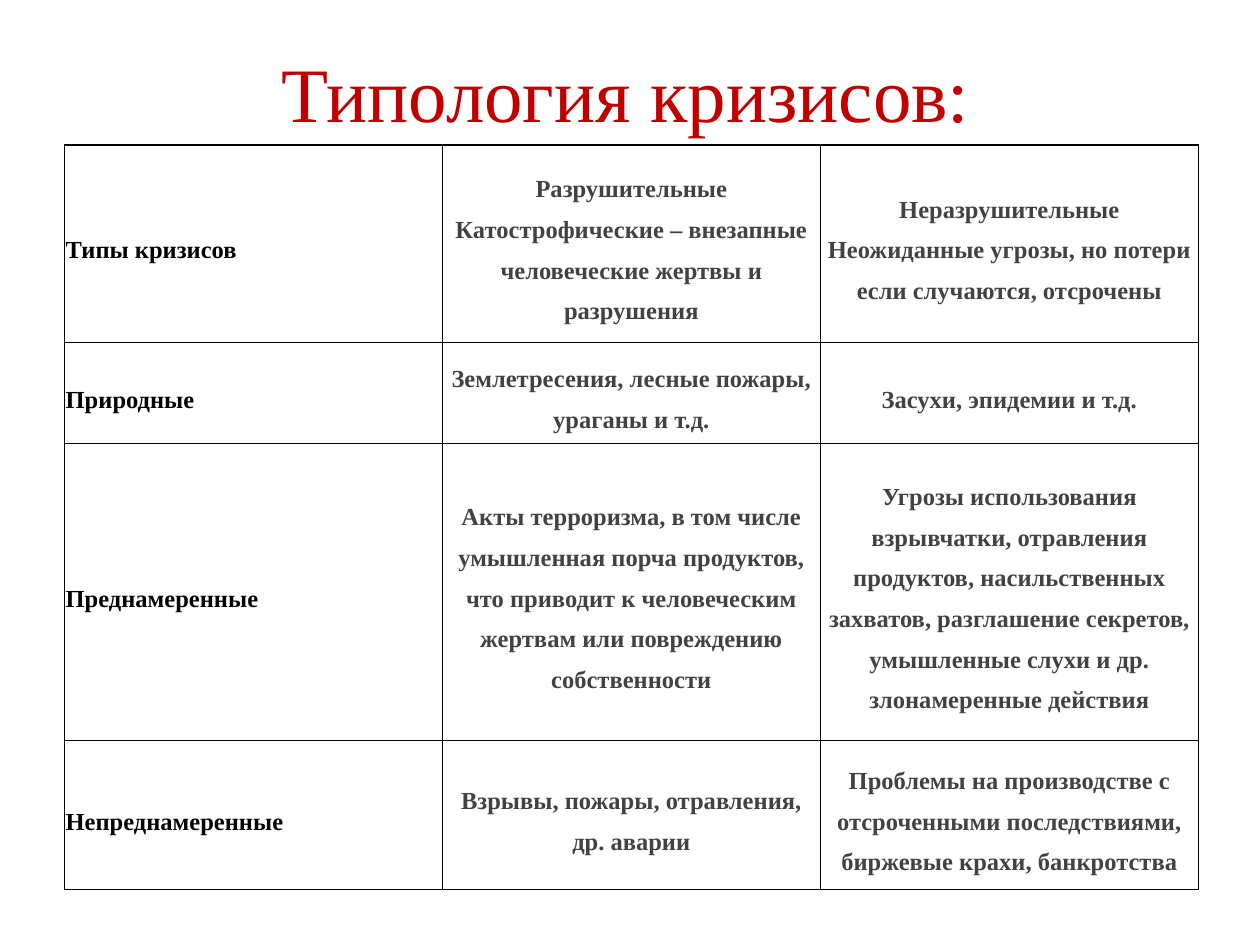
from dataclasses import dataclass

from lxml.etree import SubElement
from pptx import Presentation
from pptx.dml.color import RGBColor
from pptx.enum.text import MSO_ANCHOR as Anchor, PP_ALIGN as Align
from pptx.oxml.ns import qn
from pptx.util import Pt


@dataclass(frozen=True)
class Theme:
    font: str = "Times New Roman"
    title_color: str = "C00000"
    label_color: str = "000000"
    body_color: str = "424242"
    cell_fill: str = "FFFFFF"
    border_color: str = "000000"
    title_size: int = 44
    table_size: int = 14
    border_width: int = 1
    line_spacing: float = 1.5
    cell_margin: float = 0.72


THEME = Theme()

COLUMN_WIDTH = 216
ROW_HEIGHTS = (113, 57.6, 169.9, 85)
CRISIS_ROWS = (
    ("Типы кризисов",
     "Разрушительные Катострофические – внезапные человеческие жертвы и разрушения",
     "Неразрушительные Неожиданные угрозы, но потери если случаются, отсрочены"),
    ("Природные",
     "Землетресения, лесные пожары, ураганы и т.д.",
     "Засухи, эпидемии и т.д."),
    ("Преднамеренные",
     "Акты терроризма, в том числе умышленная порча продуктов, что приводит "
     "к человеческим жертвам или повреждению собственности",
     "Угрозы использования взрывчатки, отравления продуктов, насильственных "
     "захватов, разглашение секретов, умышленные слухи и др. злонамеренные действия"),
    ("Непреднамеренные",
     "Взрывы, пожары, отравления, др. аварии",
     "Проблемы на производстве с отсроченными последствиями, биржевые крахи, "
     "банкротства"),
)


def add_run(paragraph, text, size, color, bold=False):
    run = paragraph.add_run()
    run.text = text
    run.font.name = THEME.font
    run.font.size = Pt(size)
    run.font.bold = bold
    run.font.color.rgb = RGBColor.from_string(color)


def add_title(slide, text):
    shape = slide.shapes.add_textbox(Pt(31), Pt(21.6), Pt(653), Pt(61.2))
    frame = shape.text_frame
    frame.word_wrap = True
    frame.vertical_anchor = Anchor.MIDDLE
    paragraph = frame.paragraphs[0]
    paragraph.alignment = Align.CENTER
    add_run(paragraph, text, THEME.title_size, THEME.title_color)


def set_borders(cell):
    """Draw all four edges; lines must precede the fill in the cell properties."""
    properties = cell._tc.get_or_add_tcPr()
    for edge in ("a:lnL", "a:lnR", "a:lnT", "a:lnB"):
        line = SubElement(properties, qn(edge), w=str(Pt(THEME.border_width)))
        fill = SubElement(line, qn("a:solidFill"))
        SubElement(fill, qn("a:srgbClr"), val=THEME.border_color)


def fill_cell(cell, text, is_label):
    set_borders(cell)
    cell.fill.solid()
    cell.fill.fore_color.rgb = RGBColor.from_string(THEME.cell_fill)
    cell.vertical_anchor = Anchor.MIDDLE
    margin = Pt(THEME.cell_margin)
    cell.margin_left = cell.margin_right = margin
    cell.margin_top = cell.margin_bottom = margin
    paragraph = cell.text_frame.paragraphs[0]
    paragraph.alignment = Align.JUSTIFY if is_label else Align.CENTER
    paragraph.line_spacing = THEME.line_spacing
    color = THEME.label_color if is_label else THEME.body_color
    add_run(paragraph, text, THEME.table_size, color, bold=True)


def add_crisis_table(slide):
    column_count = len(CRISIS_ROWS[0])
    table = slide.shapes.add_table(
        len(CRISIS_ROWS), column_count, Pt(36.8), Pt(82.8),
        Pt(COLUMN_WIDTH * column_count), Pt(sum(ROW_HEIGHTS))).table
    for column in table.columns:
        column.width = Pt(COLUMN_WIDTH)
    for row, height, texts in zip(table.rows, ROW_HEIGHTS, CRISIS_ROWS):
        row.height = Pt(height)
        for index, text in enumerate(texts):
            fill_cell(row.cells[index], text, is_label=index == 0)


def main():
    presentation = Presentation()
    presentation.slide_width, presentation.slide_height = Pt(720), Pt(540)
    slide = presentation.slides.add_slide(presentation.slide_layouts[6])
    add_title(slide, "Типология кризисов:")
    add_crisis_table(slide)
    presentation.save("out.pptx")


if __name__ == "__main__":
    main()
